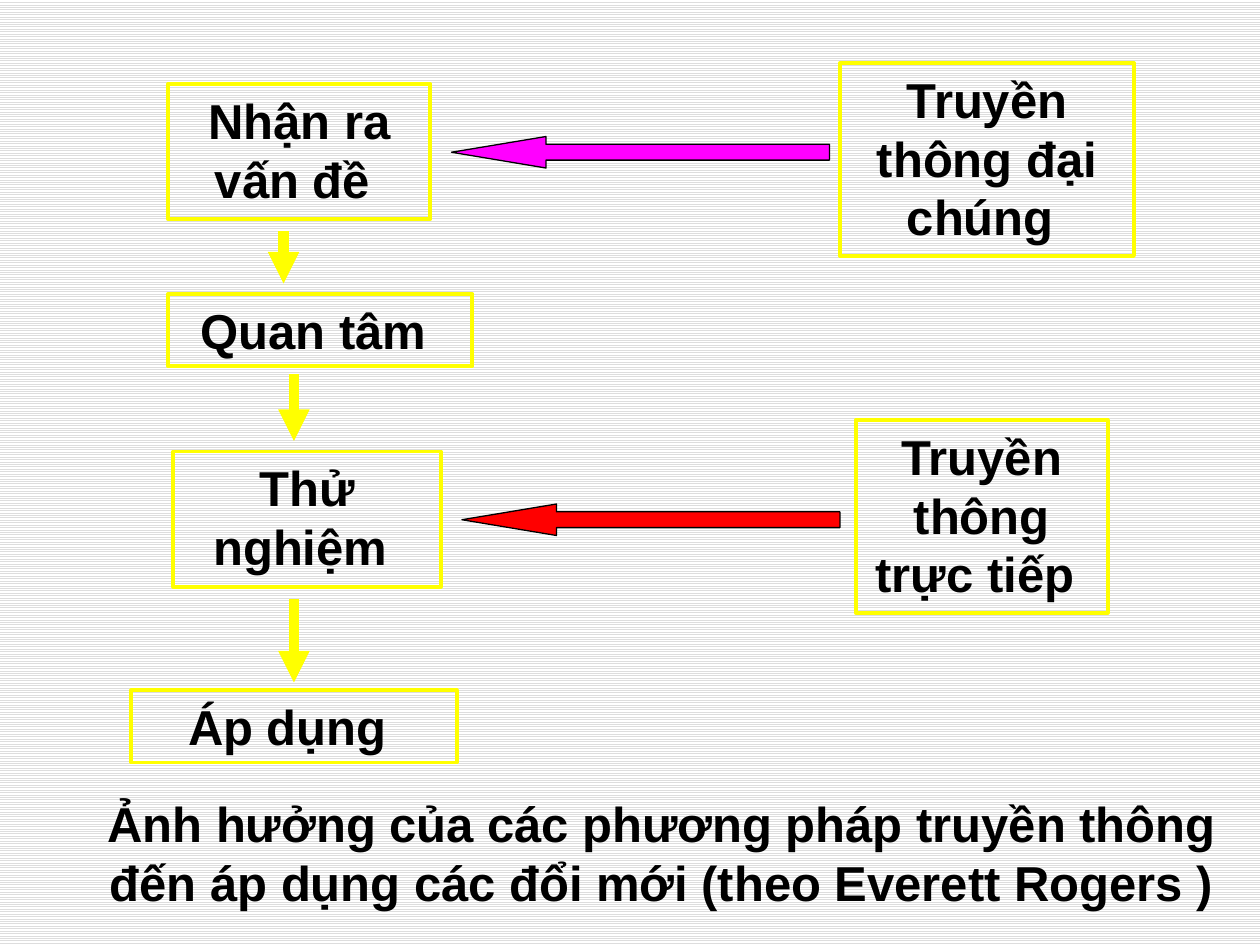
from dataclasses import dataclass

from lxml import etree
from pptx import Presentation
from pptx.dml.color import RGBColor
from pptx.enum.dml import MSO_PATTERN
from pptx.enum.shapes import MSO_CONNECTOR, MSO_SHAPE
from pptx.enum.text import MSO_ANCHOR, PP_ALIGN
from pptx.oxml.ns import qn
from pptx.util import Pt

STRIPE = MSO_PATTERN.LIGHT_HORIZONTAL
LINE = MSO_CONNECTOR.STRAIGHT
RECT, ARROW = MSO_SHAPE.RECTANGLE, MSO_SHAPE.LEFT_ARROW
TOP, MID = MSO_ANCHOR.TOP, PP_ALIGN.CENTER
PX = 9525


@dataclass(frozen=True)
class Theme:
    """Hold the colours, type and line widths."""

    ink: str = "000000"
    paper: str = "FFFFFF"
    stripe: str = "DDDDDD"
    frame: str = "FFFF00"
    mass: str = "FF00FF"
    direct: str = "FF0000"
    font: str = "Arial"
    size: int = 28
    edge: float = 2.25
    flow: float = 6
    thin: float = 0.75


def rgb(code):
    """Turn a hex code into a colour."""
    return RGBColor.from_string(code)


def apply(item, form):
    """Set each attribute named in a dict."""
    for name, value in form.items():
        setattr(item, name, value)


class Board:
    """Draw styled elements on the current slide."""

    def __init__(self, deck, theme):
        """Add a blank slide with a striped ground."""
        self.theme = theme
        self.slide = deck.slides.add_slide(deck.slide_layouts[6])
        self.shapes = self.slide.shapes
        fill = self.slide.background.fill
        fill.patterned()
        fill.pattern = STRIPE
        fill.fore_color.rgb = rgb(theme.stripe)
        fill.back_color.rgb = rgb(theme.paper)

    def letter(self, shape, text):
        """Put bold centred text in a shape."""
        frame = shape.text_frame
        apply(frame, {"word_wrap": True, "vertical_anchor": TOP})
        para = frame.paragraphs[0]
        para.alignment = MID
        run = para.add_run()
        run.text = text
        look = {"name": self.theme.font, "size": Pt(self.theme.size), "bold": True}
        apply(run.font, look)
        run.font.color.rgb = rgb(self.theme.ink)

    def stroke(self, line, tint, width):
        """Colour a line and set its width."""
        line.color.rgb = rgb(tint)
        line.width = Pt(width)

    def shape(self, kind, area, tint, width):
        """Add a preset shape with an outline."""
        shape = self.shapes.add_shape(kind, *(n * PX for n in area))
        shape.shadow.inherit = False
        self.stroke(shape.line, tint, width)
        return shape

    def box(self, text, *area):
        """Add a framed box of text."""
        shape = self.shape(RECT, area, self.theme.frame, self.theme.edge)
        shape.fill.background()
        self.letter(shape, text)

    def label(self, text, *area):
        """Add plain text."""
        self.letter(self.shapes.add_textbox(*(n * PX for n in area)), text)

    def arrow(self, tint, *area):
        """Add a filled arrow with a long head."""
        shape = self.shape(ARROW, area, self.theme.ink, self.theme.thin)
        shape.adjustments[0] = 0.5
        shape.adjustments[1] = 3
        shape.fill.solid()
        shape.fill.fore_color.rgb = rgb(tint)

    def step(self, x, top, end):
        """Add a downward line with an arrowhead."""
        link = self.shapes.add_connector(LINE, x * PX, top * PX, x * PX, end * PX)
        self.stroke(link.line, self.theme.frame, self.theme.flow)
        props = link._element.spPr
        etree.SubElement(props.find(qn("a:ln")), qn("a:tailEnd"), type="triangle")
        etree.SubElement(props, qn("a:effectLst"))


def main():
    """Build and save the slide."""
    deck = Presentation()
    apply(deck, {"slide_width": 960 * PX, "slide_height": 720 * PX})
    theme = Theme()
    board = Board(deck, theme)
    for step in ((216, 176, 216), (224, 285, 336), (224, 456, 520)):
        board.step(*step)
    boxes = (
        ("Nhận ra vấn đề ", 128, 64, 200, 103),
        ("Truyền thông đại chúng ", 640, 48, 224, 147),
        ("Quan tâm ", 128, 224, 232, 55),
        ("Thử nghiệm ", 132, 344, 204, 103),
        ("Áp dụng ", 100, 526, 248, 55),
        ("Truyền thông trực tiếp ", 652, 320, 192, 147),
    )
    for box in boxes:
        board.box(*box)
    board.label(
        "Ảnh hưởng của các phương pháp truyền thông "
        "đến áp dụng các đổi mới (theo Everett Rogers )",
        48, 600, 912, 99,
    )
    for tint, x, y in ((theme.mass, 344, 104), (theme.direct, 352, 384)):
        board.arrow(tint, x, y, 288, 24)
    deck.save("out.pptx")


if __name__ == "__main__":
    main()
